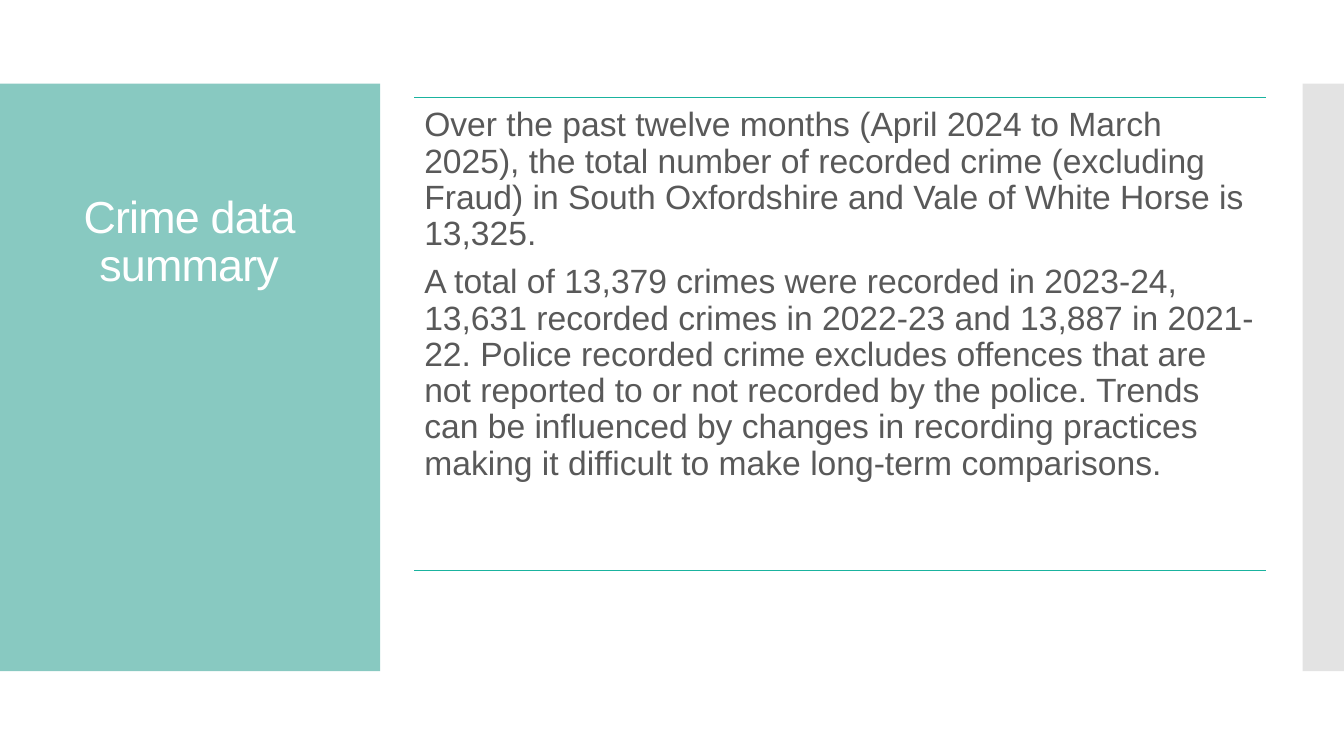
from dataclasses import dataclass

from lxml import etree
from pptx import Presentation
from pptx.dml.color import RGBColor
from pptx.enum import shapes, text
from pptx.oxml.ns import qn
from pptx.util import Inches, Pt

COLOURS = {
    "teal": "88C9C1",
    "grey": "C8C8C8",
    "rule": "1AB39F",
    "body": "595959",
    "title": "FFFFFF",
}
FONT = "Arial"
BODY_LEFT, BODY_TOP, BODY_WIDTH = 4.11, 0.97, 8.45
SUMMARY = [
    "Over the past twelve months (April 2024 to March 2025), the total number of "
    "recorded crime (excluding Fraud) in South Oxfordshire and Vale of White Horse "
    "is 13,325.",
    "A total of 13,379 crimes were recorded in 2023-24, 13,631 recorded crimes in "
    "2022-23 and 13,887 in 2021-22. Police recorded crime excludes offences that "
    "are not reported to or not recorded by the police. Trends can be influenced by "
    "changes in recording practices making it difficult to make long-term "
    "comparisons.",
]


@dataclass
class Panel:
    left: float
    width: float
    colour: str
    opacity: int = 100


PANELS = [Panel(0, 3.77, "teal"), Panel(12.92, 0.42, "grey", opacity=50)]
RULE_TOPS = [BODY_TOP, 5.66]


def colour(name: str) -> RGBColor:
    return RGBColor.from_string(COLOURS[name])


def add_panel(slide, panel: Panel) -> None:
    shape = slide.shapes.add_shape(
        shapes.MSO_SHAPE.RECTANGLE,
        Inches(panel.left), Inches(0.83), Inches(panel.width), Inches(5.83),
    )
    shape.shadow.inherit = False
    shape.line.fill.background()
    shape.fill.solid()
    shape.fill.fore_color.rgb = colour(panel.colour)
    if panel.opacity < 100:
        fill_colour = shape._element.spPr.find(qn("a:solidFill"))[0]
        etree.SubElement(fill_colour, qn("a:alpha"), val=str(panel.opacity * 1000))


def add_rule(slide, top: float) -> None:
    rule = slide.shapes.add_connector(
        shapes.MSO_CONNECTOR.STRAIGHT,
        Inches(BODY_LEFT), Inches(top), Inches(BODY_LEFT + BODY_WIDTH), Inches(top),
    )
    rule.line.color.rgb = colour("rule")
    rule.line.width = Pt(0.85)
    etree.SubElement(rule._element.spPr, qn("a:effectLst"))


def write_text(shape, paragraphs: list[str], *, size: float, colour_name: str,
               align=text.PP_ALIGN.LEFT, space_after: float = 0,
               inset: float = 0.1, inset_y: float = 0.1,
               tracking: float = 0) -> None:
    """Fill a shape with top-anchored paragraphs; tracking is in points."""
    frame = shape.text_frame
    frame.word_wrap = True
    frame.auto_size = text.MSO_AUTO_SIZE.NONE
    frame.vertical_anchor = text.MSO_ANCHOR.TOP
    frame.margin_left = frame.margin_right = Inches(inset)
    frame.margin_top = frame.margin_bottom = Inches(inset_y)
    for index, words in enumerate(paragraphs):
        paragraph = frame.add_paragraph() if index else frame.paragraphs[0]
        paragraph.alignment = align
        paragraph.line_spacing = 0.9
        paragraph.space_before = Pt(0)
        paragraph.space_after = Pt(space_after)
        run = paragraph.add_run()
        run.text = words
        run.font.name = FONT
        run.font.size = Pt(size)
        run.font.color.rgb = colour(colour_name)
        if tracking:
            run.font._element.set("spc", str(round(tracking * 100)))


def place_title(slide) -> None:
    """Move the title placeholder onto the teal panel, in front of it."""
    title = slide.shapes.title
    title.left, title.top = Inches(0), Inches(1.88)
    title.width, title.height = Inches(3.75), Inches(4.74)
    write_text(title, ["Crime data summary"], size=32, colour_name="title",
               align=text.PP_ALIGN.CENTER, inset_y=0.05, tracking=-0.6)
    slide.shapes._spTree.append(title._element)


def main() -> None:
    presentation = Presentation()
    presentation.slide_width = Inches(13.33)
    presentation.slide_height = Inches(7.5)
    slide = presentation.slides.add_slide(presentation.slide_layouts[5])

    for panel in PANELS:
        add_panel(slide, panel)
    for top in RULE_TOPS:
        add_rule(slide, top)
    body = slide.shapes.add_textbox(
        Inches(BODY_LEFT), Inches(BODY_TOP), Inches(BODY_WIDTH), Inches(2.78)
    )
    write_text(body, SUMMARY, size=24, colour_name="body", space_after=8.4)
    place_title(slide)

    presentation.save("out.pptx")


if __name__ == "__main__":
    main()
